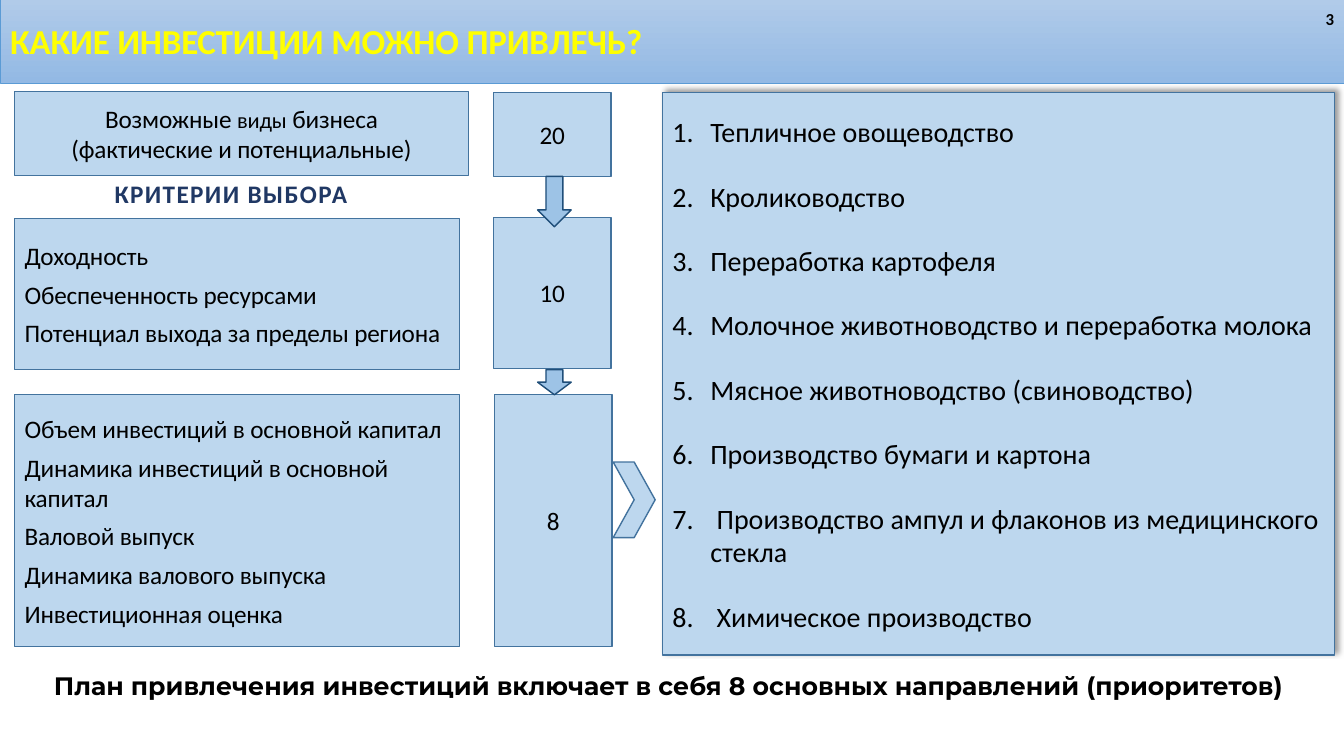
from dataclasses import dataclass

from lxml.etree import SubElement
from pptx import Presentation
from pptx.dml.color import RGBColor as RGB
from pptx.enum.shapes import MSO_SHAPE as Kind
from pptx.enum.text import MSO_ANCHOR as Anchor, PP_ALIGN as Align
from pptx.oxml.ns import qn
from pptx.util import Pt

PX = 9525


@dataclass(frozen=True)
class Theme:
    black: str = "000000"
    yellow: str = "FFFF00"
    navy: str = "203864"
    pale: str = "BDD7EE"
    edge: str = "43739E"
    arrow: str = "9DC3E6"
    rim: str = "1F4E79"
    top: str = "B1CBE9"
    base: str = "93B9E4"
    trim: str = "5B9BD5"
    font: str = "Calibri"
    wide: str = "Montserrat"
    title: int = 25
    list: int = 20
    body: int = 18
    small: int = 16
    page: int = 12


theme = Theme()


def write(shape, lines, align=Align.LEFT, size=theme.body, color=theme.black,
          font=theme.font, bold=False, track=-10, before=0, after=0, anchor=Anchor.MIDDLE):
    """Fill a shape with paragraphs; a line is text or a list of (text, size) runs."""
    frame = shape.text_frame
    frame.word_wrap = True
    frame.vertical_anchor = anchor
    for i, line in enumerate(lines):
        para = frame.add_paragraph() if i else frame.paragraphs[0]
        para.alignment = align
        para.space_before, para.space_after = Pt(before), Pt(after)
        for text, pts in [(line, size)] if isinstance(line, str) else line:
            run = para.add_run()
            run.text = text
            run.font.name, run.font.size, run.font.bold = font, Pt(pts), bold
            run.font.color.rgb = RGB.from_string(color)
            run.font._element.set("spc", str(track))


def draw(kind, spot, fill=theme.pale, line=theme.edge):
    shape = slide.shapes.add_shape(kind, *(n * PX for n in spot))
    shape.shadow.inherit = False
    shape.fill.solid()
    shape.fill.fore_color.rgb = RGB.from_string(fill)
    shape.line.color.rgb = RGB.from_string(line)
    shape.line.width = Pt(1)
    return shape


deck = Presentation()
deck.slide_width, deck.slide_height = 1280 * PX, 720 * PX
slide = deck.slides.add_slide(deck.slide_layouts[5])

# Title band
title = slide.shapes.title
title.left, title.top, title.width, title.height = 0, -PX, 1280 * PX, 80 * PX
title.fill.gradient()
title.fill.gradient_angle = 270
for stop, tone in zip(title.fill.gradient_stops, (theme.top, theme.base)):
    stop.color.rgb = RGB.from_string(tone)
title.line.color.rgb = RGB.from_string(theme.trim)
title.line.width = Pt(0.5)
write(title, ["КАКИЕ ИНВЕСТИЦИИ МОЖНО ПРИВЛЕЧЬ?"], size=theme.title,
      color=theme.yellow, bold=True)

# Kinds of business and selection criteria
kinds = draw(Kind.RECTANGLE, (14, 87, 432, 80))
write(kinds, [
    [("Возможные ", theme.body), ("виды", theme.small), (" бизнеса", theme.body)],
    "(фактические и потенциальные)",
], Align.CENTER)

criteria = [
    (208, 144, ["Доходность", "Обеспеченность ресурсами",
                "Потенциал выхода за пределы региона"]),
    (376, 240, ["Объем инвестиций в основной капитал",
                "Динамика инвестиций в основной капитал",
                "Валовой выпуск", "Динамика валового выпуска",
                "Инвестиционная оценка"]),
]
for y, high, lines in criteria:
    write(draw(Kind.RECTANGLE, (14, y, 424, high)), lines, after=6)

# Funnel of counts
counts = [("20", 470, 88, 80), ("10", 470, 207, 144), ("8", 471, 376, 240)]
for count, x, y, high in counts:
    write(draw(Kind.RECTANGLE, (x, y, 112, high)), [count], Align.CENTER)
for y, high in [(168, 48), (352, 24)]:
    draw(Kind.DOWN_ARROW, (512, y, 32, high), theme.arrow, theme.rim)
draw(Kind.CHEVRON, (584, 440, 40, 72))

# Numbered list of chosen fields
fields = draw(Kind.RECTANGLE, (631, 88, 640, 536))
write(fields, [
    "Тепличное овощеводство",
    "Кролиководство",
    "Переработка картофеля",
    "Молочное животноводство и переработка молока",
    "Мясное животноводство (свиноводство)",
    "Производство бумаги и картона",
    " Производство ампул и флаконов из медицинского стекла",
    " Химическое производство",
], size=theme.list, track=0, before=22)
for para in fields.text_frame.paragraphs:
    props = para._p.get_or_add_pPr()
    props.set("marL", str(36 * PX))
    props.set("indent", str(-36 * PX))
    SubElement(props, qn("a:buAutoNum"), type="arabicPeriod")
effects = fields._element.spPr.find(qn("a:effectLst"))
shadow = SubElement(effects, qn("a:outerShdw"), blurRad=str(Pt(4)), dist=str(Pt(3)),
                    dir=str(315 * 60000), algn="bl", rotWithShape="0")
shade = SubElement(shadow, qn("a:srgbClr"), val=theme.black)
SubElement(shade, qn("a:alpha"), val="40000")

# Free text
labels = [
    ("КРИТЕРИИ ВЫБОРА", (12, 165, 416, 38),
     dict(align=Align.CENTER, color=theme.navy, track=100, anchor=Anchor.TOP)),
    ("План привлечения инвестиций включает в себя 8 основных направлений (приоритетов) ",
     (20, 634, 1240, 38),
     dict(align=Align.CENTER, font=theme.wide, track=0, anchor=Anchor.TOP)),
    ("3", (992, -1, 288, 38), dict(align=Align.RIGHT, size=theme.page, track=10)),
]
for text, spot, style in labels:
    label = slide.shapes.add_textbox(*(n * PX for n in spot))
    write(label, [text], bold=True, **style)

deck.save("out.pptx")
